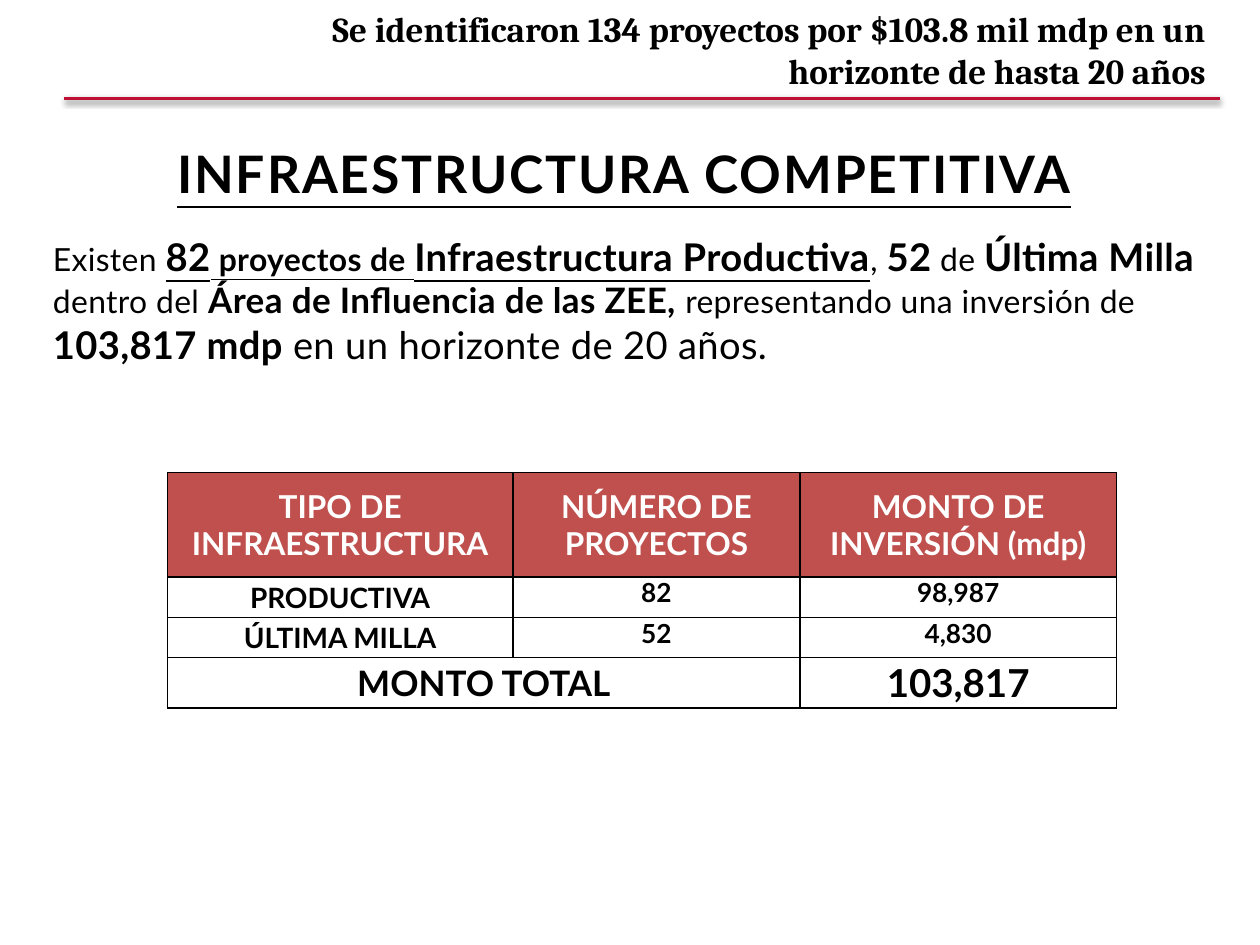
from dataclasses import dataclass

from lxml.etree import SubElement
from pptx import Presentation
from pptx.dml.color import RGBColor as RGB
from pptx.enum.shapes import MSO_CONNECTOR as CONN
from pptx.enum.text import MSO_ANCHOR as ANCHOR, PP_ALIGN as ALIGN
from pptx.oxml.ns import qn
from pptx.util import Inches, Pt


@dataclass(frozen=True)
class Theme:
    font: str = "Lato"
    header_font: str = "Cambria"
    black: str = "000000"
    white: str = "FFFFFF"
    rule: str = "BE0F34"
    table_head: str = "C0504D"
    title: float = 29.5
    header: float = 20
    body: float = 18.2
    medium: float = 20
    big: float = 21.8
    column_head: float = 18
    label: float = 16
    value: float = 15
    total_label: float = 20
    total: float = 22


class SlideBuilder:
    def __init__(self, slide, theme):
        self.s = slide
        self.theme = theme

    def style(self, r, size, bold=True, underline=False, color=None, font=None, spacing=0):
        f = r.font
        f.name = font or self.theme.font
        f.size, f.bold, f.underline = Pt(size), bold, underline
        f.color.rgb = RGB.from_string(color or self.theme.black)
        if spacing:
            r._r.get_or_add_rPr().set("spc", str(round(spacing * 100)))

    def text(self, box, runs, align=ALIGN.LEFT, anchor=ANCHOR.TOP, inset=None, **look):
        """Runs are (text, size, bold, underline)."""
        tf = self.s.shapes.add_textbox(*map(Inches, box)).text_frame
        tf.word_wrap = True
        tf.vertical_anchor = anchor
        if inset is not None:
            tf.margin_left = tf.margin_right = tf.margin_top = tf.margin_bottom = Inches(inset)
        p = tf.paragraphs[0]
        p.alignment = align
        for text, size, bold, underline in runs:
            r = p.add_run()
            r.text = text
            self.style(r, size, bold, underline, **look)

    def rule(self, x1, x2, y):
        line = self.s.shapes.add_connector(CONN.STRAIGHT, *map(Inches, (x1, y, x2, y)))
        line.line.color.rgb = RGB.from_string(self.theme.rule)
        line.line.width = Pt(2)
        effects = SubElement(line._element.spPr, qn("a:effectLst"))
        shadow = SubElement(effects, qn("a:outerShdw"), blurRad=str(Pt(3.1)),
                            dist=str(Pt(1.6)), dir="5400000", rotWithShape="0")
        color = SubElement(shadow, qn("a:srgbClr"), val=self.theme.black)
        SubElement(color, qn("a:alpha"), val="38000")

    def borders(self, cell):
        tc_pr = cell._tc.get_or_add_tcPr()
        for side in ("lnL", "lnR", "lnT", "lnB"):
            ln = SubElement(tc_pr, qn("a:" + side), w=str(Pt(1)))
            fill = SubElement(ln, qn("a:solidFill"))
            SubElement(fill, qn("a:srgbClr"), val=self.theme.black)

    def cell(self, cell, text, size, color=None, fill=None, anchor=ANCHOR.MIDDLE):
        cell.margin_left = cell.margin_right = cell.margin_top = cell.margin_bottom = 0
        cell.vertical_anchor = anchor
        self.borders(cell)
        if fill:
            cell.fill.solid()
            cell.fill.fore_color.rgb = RGB.from_string(fill)
        else:
            cell.fill.background()
        p = cell.text_frame.paragraphs[0]
        p.text = text
        p.alignment = ALIGN.CENTER
        p.font.size = Pt(size)
        for r in p.runs:
            self.style(r, size, color=color)

    def table(self, left, top, widths, heights, head, rows, total):
        t = self.theme
        table = self.s.shapes.add_table(
            len(heights), len(widths), Inches(left), Inches(top),
            Inches(sum(widths)), Inches(sum(heights))).table
        for column, width in zip(table.columns, widths):
            column.width = Inches(width)
        for row, height in zip(table.rows, heights):
            row.height = Inches(height)

        for c, text in enumerate(head):
            self.cell(table.cell(0, c), text, t.column_head, t.white, t.table_head)
        for i, (label, *values) in enumerate(rows, 1):
            self.cell(table.cell(i, 0), label, t.label)
            for c, value in enumerate(values, 1):
                self.cell(table.cell(i, c), value, t.value, anchor=ANCHOR.TOP)

        # The total label spans all columns but the last
        last = len(heights) - 1
        table.cell(last, 0).merge(table.cell(last, len(widths) - 2))
        for c, (text, size) in enumerate(zip((total[0], "", total[1]),
                                             (t.total_label, t.total_label, t.total))):
            self.cell(table.cell(last, c), text, size)


def main():
    prs = Presentation()
    prs.slide_width, prs.slide_height = Inches(10), Inches(7.5)
    t = Theme()
    b = SlideBuilder(prs.slides.add_slide(prs.slide_layouts[6]), t)

    # Summary paragraph
    b.text((0.42, 1.85, 9.25, 4.53), [
        ("Existen ", t.body, False, False),
        ("82", t.big, True, True),
        (" proyectos de ", t.body, True, True),
        ("Infraestructura Productiva", t.big, True, True),
        (", ", t.body, False, False),
        ("52", t.big, True, False),
        (" de ", t.body, False, False),
        ("Última Milla ", t.big, True, False),
        ("dentro del ", t.body, False, False),
        ("Área de Influencia de las ZEE, ", t.medium, True, False),
        ("representando una inversión de ", t.body, False, False),
        ("103,817 mdp ", t.big, True, False),
        ("en un horizonte de 20 años.", t.big, False, False),
    ], inset=0, spacing=0.2)

    # Title
    b.text((0.53, 1.1, 8.85, 0.55), [("INFRAESTRUCTURA COMPETITIVA", t.title, True, True)],
           ALIGN.CENTER, ANCHOR.MIDDLE, spacing=1.1)

    # Investment table
    b.table(1.33, 3.75, (2.74, 2.28, 2.51), (0.83, 0.32, 0.32, 0.4),
            ("TIPO DE INFRAESTRUCTURA", "NÚMERO DE PROYECTOS", "MONTO DE INVERSIÓN (mdp)"),
            (("PRODUCTIVA", "82", "98,987"), ("ÚLTIMA MILLA", "52", "4,830")),
            ("MONTO TOTAL", "103,817"))

    # Header and rule
    b.text((1.59, 0.21, 8.08, 0.37),
           [("Se identificaron 134 proyectos por $103.8 mil mdp en un horizonte de hasta 20 años",
             t.header, True, False)],
           ALIGN.RIGHT, ANCHOR.MIDDLE, font=t.header_font)
    b.rule(0.51, 9.68, 0.78)

    prs.save("out.pptx")


if __name__ == "__main__":
    main()
